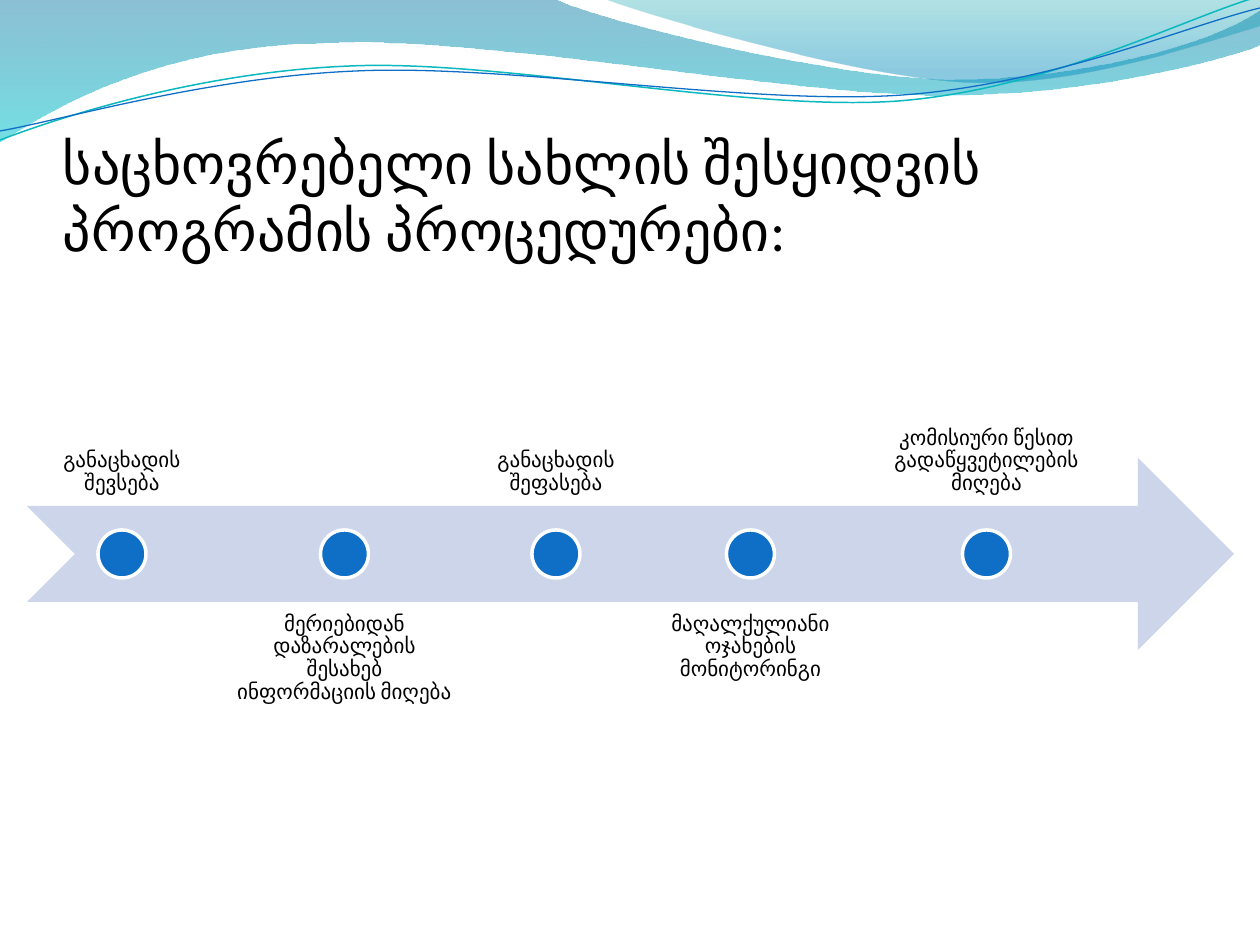
from dataclasses import dataclass

from lxml import etree
from pptx import Presentation
from pptx.dml.color import RGBColor
from pptx.enum import shapes, text
from pptx.oxml.ns import qn
from pptx.util import Pt

PX = 914400 / 126  # EMU in one px


@dataclass(frozen=True)
class Theme:
    font: str = "Calibri"
    title_size: int = 32
    label_size: int = 12
    ink: str = "000000"
    white: str = "FFFFFF"
    blue: str = "0F6FC6"
    teal: str = "0AB8BF"
    arrow: str = "CCD5EA"
    # gradient stops: position, colour, opacity in percent
    band: tuple = ((0, "0074A1", 45), (1, "00C6CF", 55))
    corner: tuple = ((0, "00A1A9", 30), (0.8, "008BBF", 45))


THEME = Theme()


def emu(px):
    return round(px * PX)


def rgb(value):
    return RGBColor.from_string(value)


def add_outline(slide, box, start, segments, close):
    """Each segment holds one point for a line or three for a cubic curve."""
    left, top = box[:2]
    points = [start] + [point for seg in segments for point in seg]
    points = [(emu(left + x), emu(top + y)) for x, y in points]
    builder = slide.shapes.build_freeform(*points[0], scale=1.0)
    builder.add_line_segments(points[1:], close=close)
    sp = builder.convert_to_shape()
    sp.shadow.inherit = False

    # Join each three points of a curve into one cubic step
    steps = iter(list(sp._element.iter(qn("a:lnTo"))))
    for seg in segments:
        first, *others = [next(steps) for _ in seg]
        if others:
            first.tag = qn("a:cubicBezTo")
            for other in others:
                first.append(other[0])
                other.getparent().remove(other)
    return sp


def add_gradient_area(slide, box, start, segments, stops):
    sp = add_outline(slide, box, start, segments, True)
    sp.line.fill.background()
    sp.fill.gradient()
    sp.fill.gradient_angle = 270
    for stop, (position, color, opacity) in zip(sp.fill.gradient_stops, stops):
        stop.position = position
        stop.color.rgb = rgb(color)
        for clr in stop._gs.iter(qn("a:srgbClr")):
            etree.SubElement(clr, qn("a:alpha")).set("val", str(opacity * 1000))


def add_text(slide, box, words, size, anchor, align, insets):
    tb = slide.shapes.add_textbox(*map(emu, box))
    tf = tb.text_frame
    tf.word_wrap = True
    tf.vertical_anchor = anchor
    tf.margin_left, tf.margin_top, tf.margin_right, tf.margin_bottom = map(emu, insets)
    tf.text = words
    p = tf.paragraphs[0]
    p.alignment = align
    font = p.runs[0].font
    font.name, font.size = THEME.font, Pt(size)
    font.color.rgb = rgb(THEME.ink)
    return p


def add_preset(slide, kind, box, fill):
    sp = slide.shapes.add_shape(kind, *map(emu, box))
    sp.shadow.inherit = False
    sp.fill.solid()
    sp.fill.fore_color.rgb = rgb(fill)
    sp.line.fill.background()
    return sp


def add_waves(slide, box):
    # Wide band along the top
    add_gradient_area(slide, box, (0, 0), [
        [(554, -1)],
        [(600, 21), (837, 79), (955, 79)],
        [(1075, 79), (1207, 47), (1260, 11)],
        [(1261, 45)],
        [(1239, 55), (1096, 96), (940, 95)],
        [(784, 95), (481, 35), (324, 43)],
        [(163, 45), (58, 105), (-1, 142)],
    ], THEME.band)
    # Lighter area in the right corner
    add_gradient_area(slide, box, (604, -1), [
        [(641, 14), (859, 78), (969, 82)],
        [(1079, 87), (1211, 40), (1260, 26)],
        [(1260, 0)],
    ], THEME.corner)
    # Thin lines
    lines = [
        (THEME.teal, 0.85, (0, 140), [
            [(60, 117), (199, 72), (349, 66)],
            [(498, 59), (747, 112), (898, 101)],
            [(1050, 89), (1182, 19), (1257, -3)]]),
        (THEME.blue, 0.75, (0, 131), [
            [(59, 121), (207, 77), (357, 71)],
            [(508, 64), (752, 106), (903, 95)],
            [(1053, 84), (1186, 26), (1260, 8)]]),
    ]
    for color, width, start, segments in lines:
        sp = add_outline(slide, box, start, segments, False)
        sp.fill.background()
        sp.line.color.rgb = rgb(color)
        sp.line.width = Pt(width)


def add_title(slide, box):
    add_text(slide, box, "საცხოვრებელი სახლის შესყიდვის პროგრამის პროცედურები:",
             THEME.title_size, text.MSO_ANCHOR.BOTTOM, text.PP_ALIGN.LEFT, (0, 6, 0, 0))


def add_timeline(slide, box, steps):
    left, top, width, height = box
    band = round(height * 0.4)  # height of the arrow and of each label
    middle = top + height // 2
    dot, gap, insets = 48, 6, (13, 11, 13, 12)

    # Arrow
    add_preset(slide, shapes.MSO_SHAPE.NOTCHED_RIGHT_ARROW,
               (left, middle - band // 2, width, band), THEME.arrow)

    # Labels alternate above and below, each centred on its dot
    x = left
    for i, (words, label_width) in enumerate(steps):
        above = i % 2 == 0
        y = top if above else top + height - band
        anchor = text.MSO_ANCHOR.BOTTOM if above else text.MSO_ANCHOR.TOP
        p = add_text(slide, (x, y, label_width, band), words, THEME.label_size,
                     anchor, text.PP_ALIGN.CENTER, insets)
        p.line_spacing = 0.9
        sp = add_preset(slide, shapes.MSO_SHAPE.OVAL,
                        (x + (label_width - dot) / 2, middle - dot // 2, dot, dot), THEME.blue)
        sp.line.color.rgb = rgb(THEME.white)
        sp.line.width = Pt(2)
        x += label_width + gap


def main():
    prs = Presentation()
    prs.slide_width, prs.slide_height = emu(1260), emu(945)
    slide = prs.slides.add_slide(prs.slide_layouts[6])
    add_waves(slide, (0, 0, 1260, 142))
    add_title(slide, (63, 105, 1134, 158))
    add_timeline(slide, (27, 315, 1207, 479), [
        ("განაცხადის შევსება", 190),
        ("მერიებიდან დაზარალების შესახებ ინფორმაციის მიღება", 243),
        ("განაცხადის შეფასება", 168),
        ("მაღალქულიანი ოჯახების მონიტორინგი", 209),
        ("კომისიური წესით გადაწყვეტილების მიღება", 251),
    ])
    prs.save("out.pptx")


if __name__ == "__main__":
    main()
